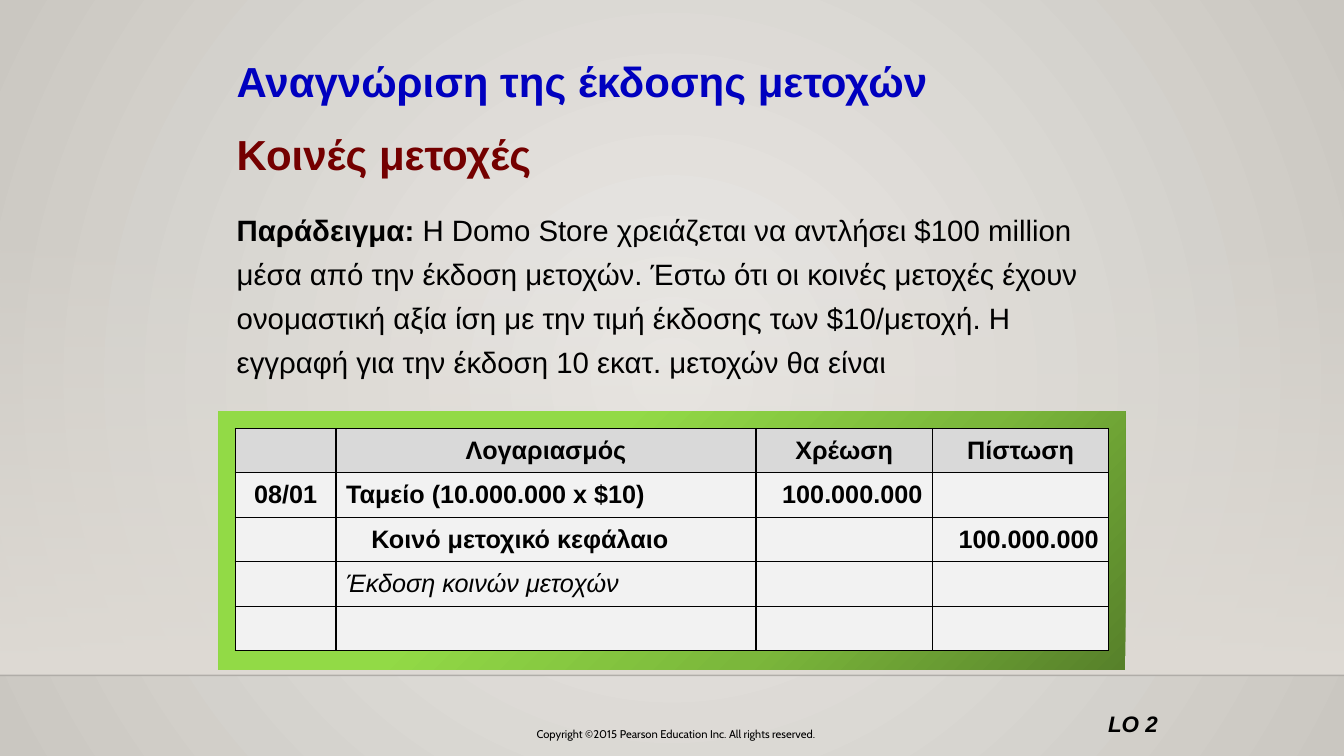
from lxml import etree
from pptx import Presentation
from pptx.dml.color import RGBColor
from pptx.enum.shapes import MSO_CONNECTOR, MSO_SHAPE
from pptx.enum.text import MSO_ANCHOR, PP_ALIGN
from pptx.oxml.ns import qn
from pptx.util import Emu, Inches, Pt

RECTANGLE = MSO_SHAPE.RECTANGLE
STRAIGHT = MSO_CONNECTOR.STRAIGHT
MIDDLE = MSO_ANCHOR.MIDDLE
LEFT, CENTER, RIGHT = PP_ALIGN.LEFT, PP_ALIGN.CENTER, PP_ALIGN.RIGHT

UNIT = Inches(1) / 12  # the slide is a grid of 160 columns by 90 rows
COLUMNS, ROWS = 160, 90
FLOOR_ROW = 80.4

BLACK, BLUE, DARK_RED = "000000", "0000BF", "740000"
HEADER_GRAY, CELL_GRAY = "D9D9D9", "F2F2F2"

TABLE_COLUMNS = (12, 50, 21, 21)
TABLE_ROW = 5.3
ENTRIES = (
    ("", "Λογαριασμός", "Χρέωση", "Πίστωση"),
    ("08/01", "Ταμείο (10.000.000 x $10)", "100.000.000", ""),
    ("", "Κοινό μετοχικό κεφάλαιο", "", "100.000.000"),
    ("", "Έκδοση κοινών μετοχών", "", ""),
    ("", "", "", ""),
)
CREDIT_ROW, NOTE_ROW = 2, 3
ENTRY_ALIGNMENTS = (CENTER, LEFT, RIGHT, RIGHT)

EXAMPLE = (
    "Η Domo Store χρειάζεται να αντλήσει $100 million μέσα από την έκδοση "
    "μετοχών. Έστω ότι οι κοινές μετοχές έχουν ονομαστική αξία ίση με την "
    "τιμή έκδοσης των $10/μετοχή. Η εγγραφή για την έκδοση 10 εκατ. μετοχών "
    "θα είναι"
)


def grid(*units):
    return [Emu(round(unit * UNIT)) for unit in units]


def rgb(color):
    return RGBColor.from_string(color)


def add_element(parent, tag, **attributes):
    return etree.SubElement(parent, qn(tag), attributes)


def set_gradient(fill, owner, stops, angle=None):
    """Stops are (percent, color, opacity); without an angle it is radial."""
    fill.gradient()
    gradient = next(owner.iter(qn("a:gradFill")))
    for child in list(gradient):
        gradient.remove(child)
    stop_list = add_element(gradient, "a:gsLst")
    for percent, color, opacity in stops:
        stop = add_element(stop_list, "a:gs", pos=str(percent * 1000))
        value = add_element(stop, "a:srgbClr", val=color)
        if opacity < 100:
            add_element(value, "a:alpha", val=str(opacity * 1000))
    if angle is None:
        radial = add_element(gradient, "a:path", path="circle")
        add_element(radial, "a:fillToRect", **dict.fromkeys("ltrb", "50000"))
    else:
        add_element(gradient, "a:lin", ang=str(angle * 60000), scaled="0")


def add_gradient_panel(slide, box, stops, angle):
    panel = slide.shapes.add_shape(RECTANGLE, *grid(*box))
    panel.shadow.inherit = False
    panel.line.fill.background()
    set_gradient(panel.fill, panel.element.spPr, stops, angle)


def add_floor_line(slide):
    line = slide.shapes.add_connector(
        STRAIGHT, *grid(0, FLOOR_ROW, COLUMNS, FLOOR_ROW))
    line.line.width = Pt(1)
    line.line.color.rgb = rgb(BLACK)
    properties = line.element.spPr
    add_element(next(properties.iter(qn("a:srgbClr"))), "a:alpha", val="20000")
    add_element(properties, "a:effectLst")


def format_font(font, size, color=BLACK, bold=False, italic=False, name="Arial"):
    font.name, font.size = name, Pt(size)
    font.bold, font.italic = bold, italic
    font.color.rgb = rgb(color)


def add_text(slide, box, text, size, alignment=LEFT, **style):
    text_box = slide.shapes.add_textbox(*grid(*box))
    frame = text_box.text_frame
    frame.word_wrap = True
    frame.text = text
    paragraph = frame.paragraphs[0]
    paragraph.alignment = alignment
    format_font(paragraph.runs[0].font, size, **style)
    return frame


def add_example(slide):
    frame = add_text(slide, (27, 23, 107, 23.5), "Παράδειγμα: ", 21, bold=True)
    frame.margin_top = frame.margin_bottom = Inches(0.1)
    paragraph = frame.paragraphs[0]
    paragraph.line_spacing = 1.25
    run = paragraph.add_run()
    run.text = EXAMPLE
    format_font(run.font, 21)


def set_borders(cell):
    """Put a thin black line on every side, ahead of the cell's fill."""
    properties = cell._tc.get_or_add_tcPr()
    for position, side in enumerate(("a:lnL", "a:lnR", "a:lnT", "a:lnB")):
        border = etree.Element(qn(side), w=str(Pt(1)))
        add_element(add_element(border, "a:solidFill"), "a:srgbClr", val=BLACK)
        properties.insert(position, border)


def add_journal(slide):
    table = slide.shapes.add_table(
        len(ENTRIES), len(TABLE_COLUMNS),
        *grid(28, 51, sum(TABLE_COLUMNS), TABLE_ROW * len(ENTRIES))).table
    for column, width in zip(table.columns, grid(*TABLE_COLUMNS)):
        column.width = width
    for row_index, entry in enumerate(ENTRIES):
        is_header = row_index == 0
        for column_index, text in enumerate(entry):
            cell = table.cell(row_index, column_index)
            cell.fill.solid()
            cell.fill.fore_color.rgb = rgb(HEADER_GRAY if is_header else CELL_GRAY)
            set_borders(cell)
            cell.vertical_anchor = MIDDLE
            cell.text = text
            paragraph = cell.text_frame.paragraphs[0]
            paragraph.alignment = CENTER if is_header else ENTRY_ALIGNMENTS[column_index]
            is_note = row_index == NOTE_ROW
            format_font(paragraph.font, 18, bold=not is_note, italic=is_note)
            for run in paragraph.runs:
                format_font(run.font, 18, bold=not is_note, italic=is_note)
    credit = table.cell(CREDIT_ROW, 1).text_frame.paragraphs[0]
    credit._p.get_or_add_pPr().set("marL", str(Inches(0.25)))


def main():
    presentation = Presentation()
    presentation.slide_width, presentation.slide_height = grid(COLUMNS, ROWS)
    slide = presentation.slides.add_slide(presentation.slide_layouts[6])

    set_gradient(slide.background.fill, slide.element,
                 ((0, "ECEAE7", 100), (100, "CAC7C1", 100)))
    add_gradient_panel(slide, (0, 26.5, COLUMNS, FLOOR_ROW - 26.5),
                       ((0, "DFDBD5", 0), (100, "DFDBD5", 100)), 90)
    add_floor_line(slide)

    add_text(slide, (27, 6, 109, 7.25), "Αναγνώριση της έκδοσης μετοχών", 30,
             color=BLUE, bold=True)
    add_text(slide, (27, 14.75, 109, 7.25), "Κοινές μετοχές", 30,
             color=DARK_RED, bold=True)
    add_example(slide)

    add_gradient_panel(slide, (26, 49, 108, 30.75),
                       ((0, "57812A", 100), (33, "7BB73B", 100),
                        (65, "92DA46", 100)), 225)
    add_journal(slide)

    add_text(slide, (129, 84, 10, 4.5), "LO 2", 16, RIGHT, bold=True, italic=True)
    add_text(slide, (52, 86, 57, 3),
             "Copyright ©2015 Pearson Education Inc. All rights reserved.",
             8, CENTER, name="Cabin")
    presentation.save("out.pptx")


if __name__ == "__main__":
    main()
